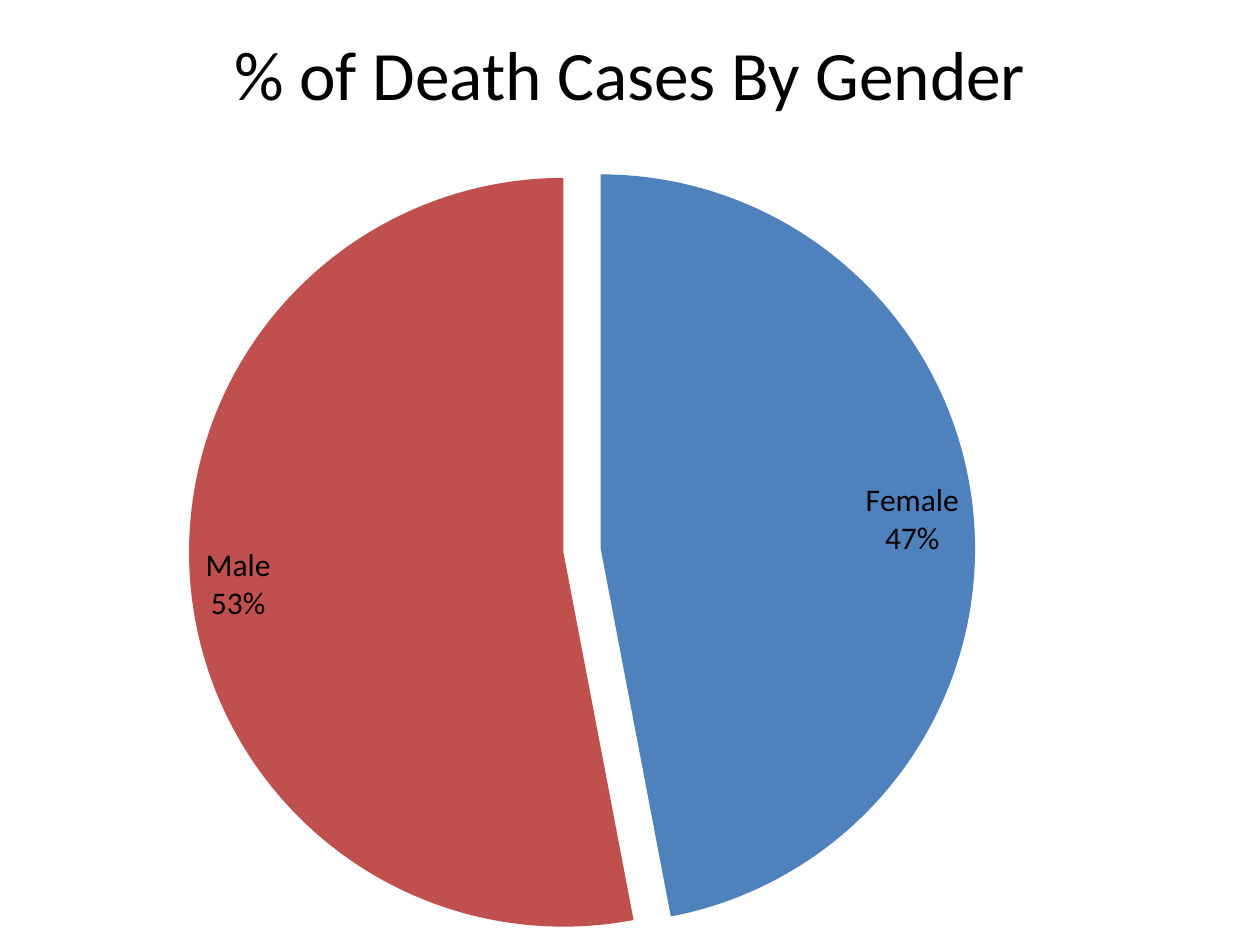
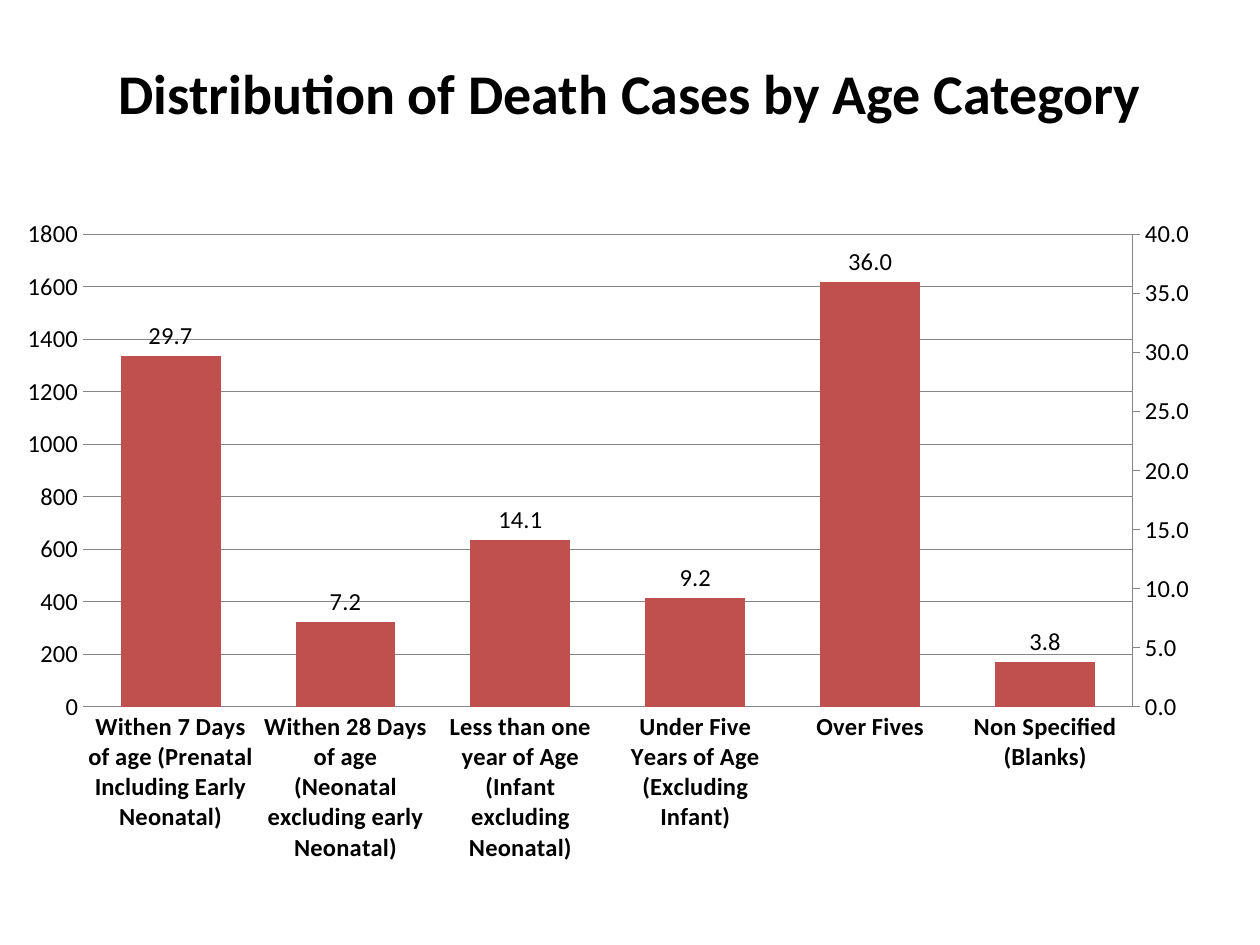
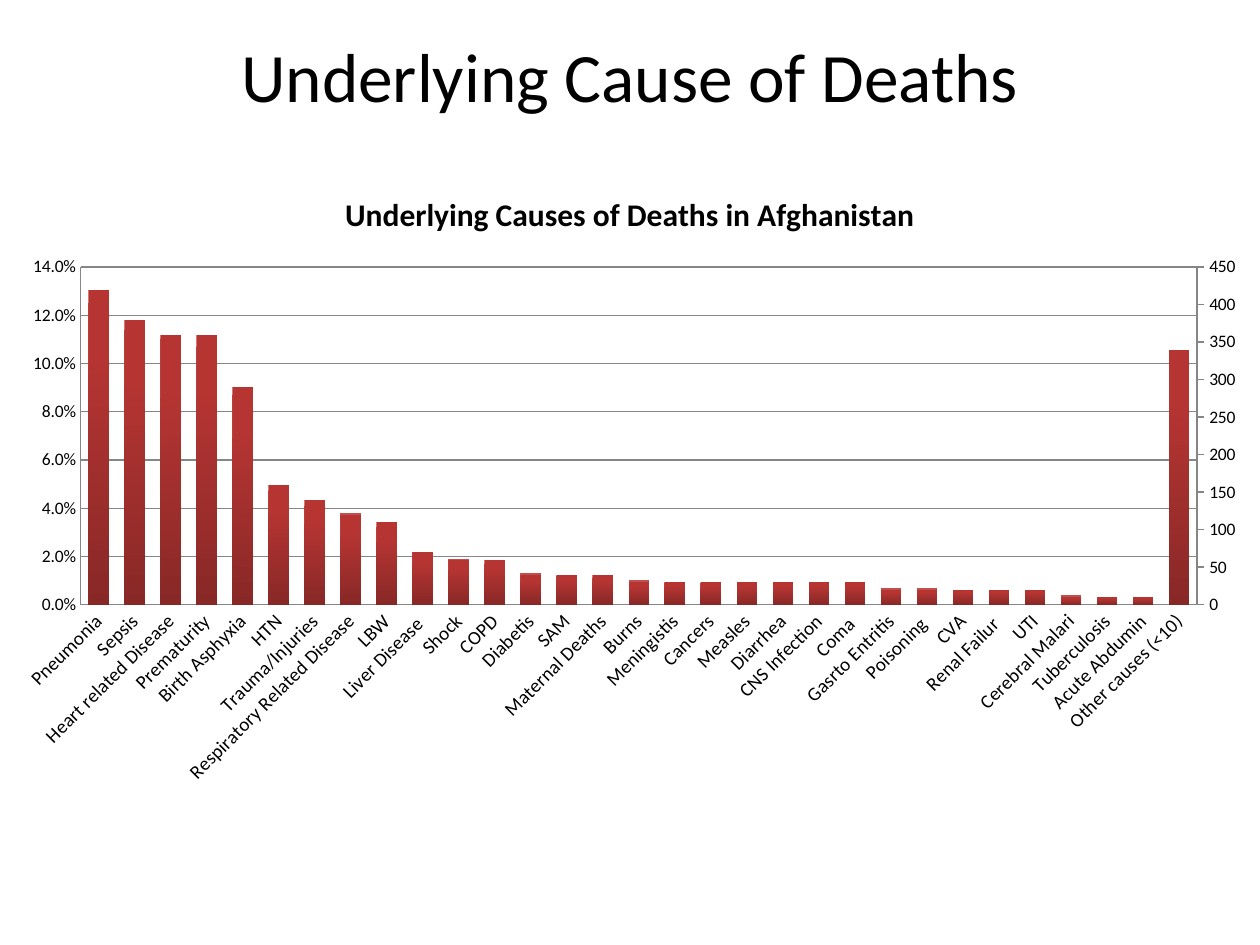
from copy import deepcopy
from dataclasses import dataclass
from typing import Optional

from pptx import Presentation
from pptx import util as u
from pptx.chart import axis as chart_axis
from pptx.chart import data as chart_data
from pptx.dml.color import RGBColor
from pptx.enum import chart as ce
from pptx.enum import text as te
from pptx.oxml import parse_xml
from pptx.oxml import ns

EMU_PER_PX = 9144
FONT = "Calibri"
BLACK = RGBColor(0x00, 0x00, 0x00)
BLUE = RGBColor(0x4F, 0x81, 0xBD)
RED = RGBColor(0xC0, 0x50, 0x4D)
BRIGHT_RED = RGBColor(0xB6, 0x35, 0x33)
DARK_RED = RGBColor(0x88, 0x28, 0x26)
GRID = RGBColor(0x86, 0x86, 0x86)


@dataclass(frozen=True)
class Box:
    left: int
    top: int
    width: int
    height: int

    def emu(self) -> tuple:
        return tuple(u.Emu(side * EMU_PER_PX)
                     for side in (self.left, self.top, self.width, self.height))


@dataclass(frozen=True)
class Title:
    text: str
    box: Box
    size: float = 39.6
    bold: bool = False


@dataclass(frozen=True)
class Scale:
    maximum: float
    step: float
    number_format: str


@dataclass(frozen=True)
class ColumnChart:
    box: Box
    plot: Box
    categories: tuple
    left_values: tuple
    right_values: tuple
    left_scale: Scale
    right_scale: Scale
    size: int
    category_size: int
    category_bold: bool = False
    category_rotation: int = 0
    left_line: bool = True
    left_color: RGBColor = BLUE
    right_gradient: bool = False
    right_labels: bool = False
    title: Optional[str] = None


GENDER_TITLE = Title("% of Death Cases By Gender", Box(50, 26, 900, 63))
GENDER_BOX = Box(0, 125, 1000, 625)
GENDER_PLOT = Box(150, 0, 624, 624)
GENDERS = {"Female": (47, BLUE), "Male": (53, RED)}

AGE_TITLE = Title("Distribution of Death Cases by Age Category",
                  Box(50, 30, 900, 87), 32, True)
AGE_CHART = ColumnChart(
    box=Box(0, 167, 1000, 550),
    plot=Box(66, 19, 833, 375),
    categories=(
        "Withen 7 Days of age (Prenatal Including Early Neonatal)",
        "Withen 28 Days of age (Neonatal excluding early Neonatal)",
        "Less than one year of Age (Infant excluding Neonatal)",
        "Under Five Years of Age (Excluding Infant)",
        "Over Fives",
        "Non Specified (Blanks)",
    ),
    left_values=(1270, 310, 600, 390, 1530, 160),
    right_values=(29.7, 7.2, 14.1, 9.2, 36, 3.8),
    left_scale=Scale(1800, 200, "General"),
    right_scale=Scale(40, 5, "0.0"),
    size=14,
    category_size=14,
    category_bold=True,
    left_line=False,
    right_labels=True,
)

CAUSE_TITLE = Title("Underlying Cause of Deaths", Box(50, 33, 900, 53))
CAUSES = (
    ("Pneumonia", 0.125, 420),
    ("Sepsis", 0.114, 380),
    ("Heart related Disease", 0.11, 360),
    ("Prematurity", 0.107, 360),
    ("Birth Asphyxia", 0.087, 290),
    ("HTN", 0.047, 160),
    ("Trauma/Injuries", 0.041, 140),
    ("Respiratory Related Disease", 0.038, 120),
    ("LBW", 0.032, 110),
    ("Liver Disease ", 0.022, 70),
    ("Shock", 0.019, 60),
    ("COPD", 0.017, 60),
    ("Diabetis", 0.013, 40),
    ("SAM", 0.012, 40),
    ("Maternal Deaths", 0.011, 40),
    ("Burns", 0.01, 30),
    ("Meningistis", 0.009, 30),
    ("Cancers", 0.009, 30),
    ("Measles", 0.009, 30),
    ("Diarrhea", 0.008, 30),
    ("CNS Infection", 0.008, 30),
    ("Coma ", 0.008, 30),
    ("Gasrto Entritis", 0.007, 20),
    ("Poisoning ", 0.007, 20),
    ("CVA", 0.006, 20),
    ("Renal Failur ", 0.005, 20),
    ("UTI", 0.005, 20),
    ("Cerebral Malari", 0.004, 10),
    ("Tuberculosis", 0.003, 10),
    ("Acute Abdumin", 0.003, 10),
    ("Other causes (<10)", 0.104, 340),
)
CAUSE_NAMES, CAUSE_SHARES, CAUSE_COUNTS = zip(*CAUSES)
CAUSE_CHART = ColumnChart(
    box=Box(0, 133, 1000, 500),
    plot=Box(64, 79, 886, 268),
    categories=CAUSE_NAMES,
    left_values=CAUSE_SHARES,
    right_values=CAUSE_COUNTS,
    left_scale=Scale(0.14, 0.02, "0.0%"),
    right_scale=Scale(450, 50, "General"),
    size=10,
    category_size=11,
    category_rotation=-45,
    left_color=RED,
    right_gradient=True,
    title="Underlying Causes of Deaths in Afghanistan",
)


def style_font(font, size: float, bold: bool = False) -> None:
    font.name = FONT
    font.size = u.Pt(size)
    font.bold = bold
    font.color.rgb = BLACK


def add_slide(presentation, title: Title):
    slide = presentation.slides.add_slide(presentation.slide_layouts[6])
    text_frame = slide.shapes.add_textbox(*title.box.emu()).text_frame
    text_frame.word_wrap = True
    text_frame.vertical_anchor = te.MSO_ANCHOR.MIDDLE
    text_frame.text = title.text
    paragraph = text_frame.paragraphs[0]
    paragraph.alignment = te.PP_ALIGN.CENTER
    style_font(paragraph.runs[0].font, title.size, title.bold)
    return slide


def plot_area(chart):
    return chart.element.xpath("c:chart/c:plotArea")[0]


def place_plot(chart, box: Box, plot: Box) -> None:
    area = plot_area(chart)
    for layout in area.xpath("c:layout"):
        area.remove(layout)
    fractions = {
        "x": plot.left / box.width,
        "y": plot.top / box.height,
        "w": plot.width / box.width,
        "h": plot.height / box.height,
    }
    sides = "".join(f'<c:{name} val="{value:.4f}"/>' for name, value in fractions.items())
    area.insert(0, parse_xml(
        f'<c:layout {ns.nsdecls("c")}><c:manualLayout><c:layoutTarget val="inner"/>'
        f'<c:xMode val="edge"/><c:yMode val="edge"/>{sides}</c:manualLayout></c:layout>'))


def add_chart(slide, kind, box: Box, plot: Box, values, size: int):
    chart = slide.shapes.add_chart(kind, *box.emu(), values).chart
    chart.has_legend = False
    chart.has_title = False
    style_font(chart.font, size)
    place_plot(chart, box, plot)
    return chart


def add_gender_pie(slide) -> None:
    values = chart_data.CategoryChartData(number_format="General")
    values.categories = list(GENDERS)
    values.add_series("Series 1", [share for share, _ in GENDERS.values()])
    chart = add_chart(slide, ce.XL_CHART_TYPE.PIE, GENDER_BOX, GENDER_PLOT, values, 10)
    plot = chart.plots[0]
    plot.vary_by_categories = True
    series = plot.series[0]
    for index, (_, color) in enumerate(GENDERS.values()):
        fill = series.points[index].format.fill
        fill.solid()
        fill.fore_color.rgb = color
    labels = series.data_labels
    style_font(labels.font, 18)
    labels.number_format = "0%"
    labels.number_format_is_linked = False
    labels.position = ce.XL_LABEL_POSITION.BEST_FIT
    labels.show_value = False
    labels.show_category_name = True
    labels.show_percentage = True
    area = plot_area(chart)
    area.xpath(".//c:ser/c:tx")[0].addnext(
        parse_xml(f'<c:explosion {ns.nsdecls("c")} val="5"/>'))
    area.xpath(".//c:ser/c:dLbls/c:showBubbleSize")[0].addnext(
        parse_xml(f'<c:separator {ns.nsdecls("c")}>\n</c:separator>'))


def style_line(line) -> None:
    line.color.rgb = GRID
    line.width = u.Pt(0.75)


def style_value_axis(axis, scale: Scale, size: int) -> None:
    axis.minimum_scale = 0
    axis.maximum_scale = scale.maximum
    axis.major_unit = scale.step
    axis.tick_labels.number_format = scale.number_format
    axis.tick_labels.number_format_is_linked = False
    style_font(axis.tick_labels.font, size)
    style_line(axis.format.line)


def split_to_right_axis(chart):
    area = plot_area(chart)
    bars = area.xpath("c:barChart")[0]
    axes = area.xpath("c:catAx | c:valAx")
    right_bars = deepcopy(bars)
    bars.remove(bars.xpath("c:ser")[1])
    right_bars.remove(right_bars.xpath("c:ser")[0])
    bars.addnext(right_bars)
    category_axis, value_axis = (deepcopy(axis) for axis in axes)
    axes[-1].addnext(value_axis)
    value_axis.addnext(category_axis)
    new_ids = {axis.xpath("c:axId")[0].get("val"): str(number)
               for number, axis in enumerate(axes, 5001)}
    for element in (right_bars, category_axis, value_axis):
        for reference in element.xpath("c:axId | c:crossAx"):
            reference.set("val", new_ids[reference.get("val")])
    category_axis.xpath("c:delete")[0].set("val", "1")
    value_axis.xpath("c:axPos")[0].set("val", "r")
    value_axis.xpath("c:crosses")[0].set("val", "max")
    return chart_axis.ValueAxis(value_axis)


def fill_series(series, color: RGBColor, gradient: bool) -> None:
    fill = series.format.fill
    if not gradient:
        fill.solid()
        fill.fore_color.rgb = color
        return
    fill.gradient()
    fill.gradient_angle = 270
    stops = ((0.2, BRIGHT_RED), (1, DARK_RED))
    for stop, (position, stop_color) in zip(fill.gradient_stops, stops):
        stop.position = position
        stop.color.rgb = stop_color


def add_columns(slide, columns: ColumnChart) -> None:
    values = chart_data.CategoryChartData()
    values.categories = columns.categories
    values.add_series("Series 1", columns.left_values, columns.left_scale.number_format)
    values.add_series("Series 2", columns.right_values, columns.right_scale.number_format)
    chart = add_chart(slide, ce.XL_CHART_TYPE.COLUMN_CLUSTERED,
                      columns.box, columns.plot, values, columns.size)
    if columns.title:
        text_frame = chart.chart_title.text_frame
        text_frame.text = columns.title
        style_font(text_frame.paragraphs[0].runs[0].font, 18, True)
        chart.chart_title.include_in_layout = False

    plot = chart.plots[0]
    plot.vary_by_categories = False
    plot.gap_width = 75
    plot.overlap = -25
    left_series, right_series = plot.series
    fill_series(left_series, columns.left_color, False)
    fill_series(right_series, RED, columns.right_gradient)
    if columns.right_labels:
        labels = right_series.data_labels
        style_font(labels.font, columns.size)
        labels.number_format = "0.0"
        labels.number_format_is_linked = False
        labels.position = ce.XL_LABEL_POSITION.OUTSIDE_END
        labels.show_value = True

    category_axis = chart.category_axis
    category_axis.major_tick_mark = ce.XL_TICK_MARK.NONE
    style_line(category_axis.format.line)
    style_font(category_axis.tick_labels.font, columns.category_size,
               columns.category_bold)
    if columns.category_rotation:
        body = plot_area(chart).xpath("c:catAx/c:txPr/a:bodyPr")[0]
        body.set("rot", str(columns.category_rotation * 60000))

    left_axis = chart.value_axis
    right_axis = split_to_right_axis(chart)
    style_value_axis(left_axis, columns.left_scale, columns.size)
    style_value_axis(right_axis, columns.right_scale, columns.size)
    left_axis.major_tick_mark = ce.XL_TICK_MARK.NONE
    left_axis.has_major_gridlines = True
    style_line(left_axis.major_gridlines.format.line)
    if not columns.left_line:
        left_axis.format.line.fill.background()
    right_axis.major_tick_mark = ce.XL_TICK_MARK.OUTSIDE
    right_axis.has_major_gridlines = False


def main() -> None:
    presentation = Presentation()
    presentation.slide_width = u.Emu(1000 * EMU_PER_PX)
    presentation.slide_height = u.Emu(750 * EMU_PER_PX)
    add_gender_pie(add_slide(presentation, GENDER_TITLE))
    add_columns(add_slide(presentation, AGE_TITLE), AGE_CHART)
    add_columns(add_slide(presentation, CAUSE_TITLE), CAUSE_CHART)
    presentation.save("out.pptx")


if __name__ == "__main__":
    main()
